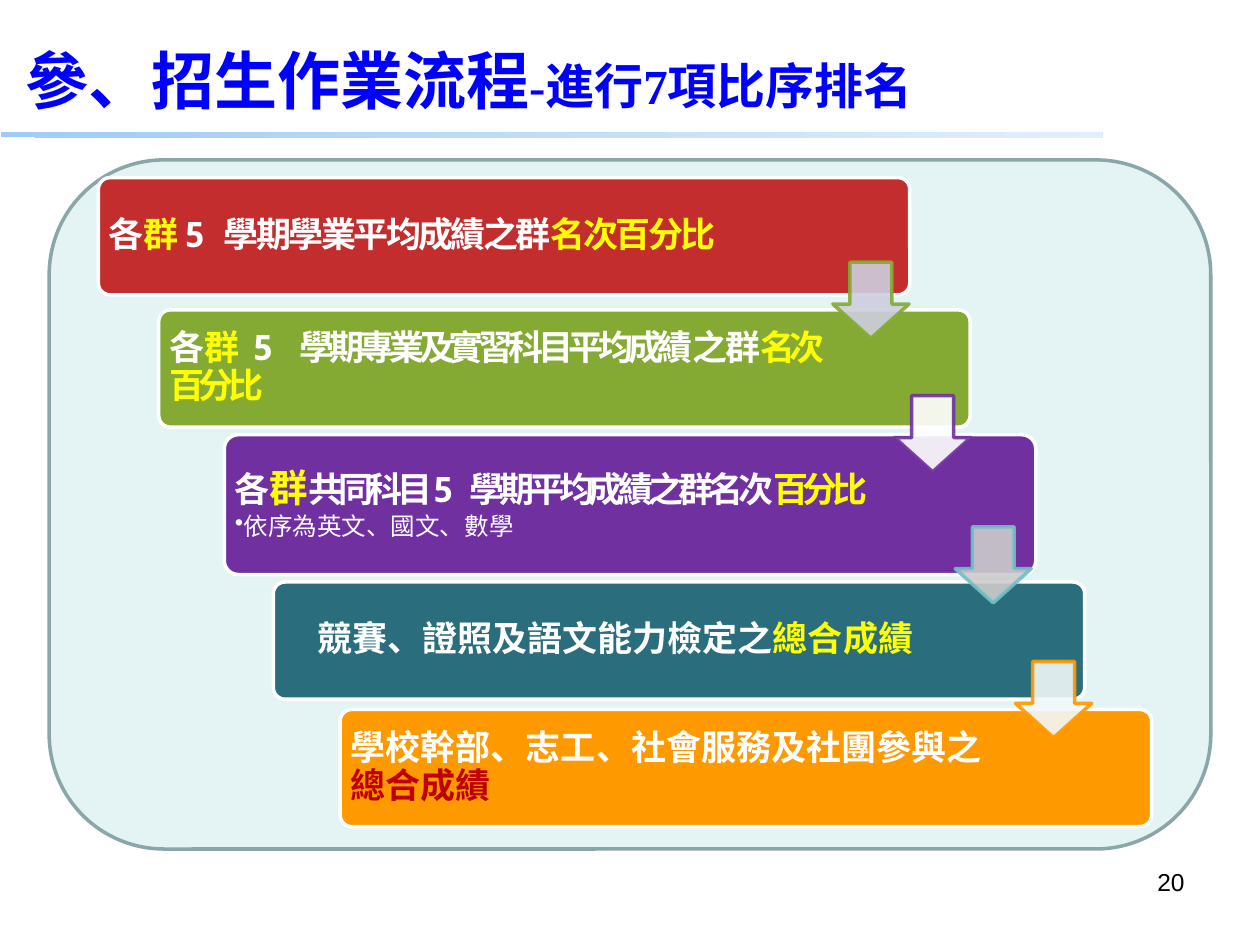
import pptx
import pptx.util
import pptx.dml.color
import pptx.enum.shapes
import pptx.enum.text
import pptx.oxml
import pptx.oxml.ns
from pptx.util import Pt

SHAPE = pptx.enum.shapes.MSO_SHAPE
ANCHOR = pptx.enum.text.MSO_ANCHOR
ALIGN = pptx.enum.text.PP_ALIGN
WHITE, YELLOW, BLUE = "FFFFFF", "FFFF00", "0000FF"
MONO = "Noto Sans Mono"


def rgb(value):
    return pptx.dml.color.RGBColor.from_string(value)


def add_run(p, text, size, color, font="Arial", bold=True, spacing=0):
    r = p.add_run()
    r.text = text
    r.font.size, r.font.bold, r.font.name = Pt(size), bold, font
    r.font.color.rgb = rgb(color)
    if spacing:
        r.font._element.set("spc", str(int(spacing * 100)))


prs = pptx.Presentation()
prs.slide_width, prs.slide_height = Pt(720), Pt(540)
s = prs.slides.add_slide(prs.slide_layouts[5])

# Rule under the title
sp = s.shapes.add_shape(SHAPE.RECTANGLE, Pt(0.7), Pt(75.6), Pt(629.3), Pt(3))
sp.shadow.inherit = False
sp.line.fill.background()
sp.fill.gradient()
sp.fill.gradient_angle = 45
for stop, color in zip(sp.fill.gradient_stops, ["9FCCF6", "E2EEFB"]):
    stop.color.rgb = rgb(color)

# Title
title = s.shapes.title
title.left, title.top, title.width, title.height = Pt(7.2), Pt(20.2), Pt(648), Pt(49.7)
tf = title.text_frame
tf.vertical_anchor = ANCHOR.TOP
tf.auto_size = pptx.enum.text.MSO_AUTO_SIZE.NONE
p = tf.paragraphs[0]
p.alignment = ALIGN.LEFT
add_run(p, "參、", 36, BLUE, "Noto Sans CJK SC")
add_run(p, "招生作業流程", 36, BLUE, "Times New Roman")
add_run(p, "-進行7項比序排名", 28, BLUE, "Times New Roman")

# Background panel
sp = s.shapes.add_shape(SHAPE.ROUNDED_RECTANGLE, Pt(28.1), Pt(91.4), Pt(663.8), Pt(393.8))
sp.shadow.inherit = False
sp.fill.solid()
sp.fill.fore_color.rgb = rgb("E4F3F4")
sp.line.color.rgb = rgb("8AA6A8")
sp.line.width = Pt(2)

# Page number
tf = s.shapes.add_textbox(Pt(516.2), Pt(491.8), Pt(167.8), Pt(37.4)).text_frame
tf.word_wrap = True
tf.paragraphs[0].alignment = ALIGN.RIGHT
add_run(tf.paragraphs[0], "20", 14, "000000", bold=False)

# Steps: left, top, height, fill, indent, runs (text, size, colour, font, bold, spacing)
steps = [
    (56.2, 101.5, 67, "C32D2E", 0, [
        ("各", 20, WHITE, "Arial", True, -1.5),
        ("群 ", 20, YELLOW, "Arial", True, -1.5),
        ("5 ", 20, WHITE, MONO, True, -1.5),
        ("學期學業平均成績之群", 20, WHITE, "Arial", True, -1.5),
        ("名次百分比", 20, YELLOW, "Arial", True, -1.5)]),
    (90.7, 177.1, 67, "84AA33", 0, [
        ("各", 20, WHITE, MONO, True, -3),
        ("群 ", 20, YELLOW, MONO, True, 1.5),
        ("5 ", 20, WHITE, MONO, True, 1.5),
        ("學期專業及實習科目平均成績", 20, WHITE, "Arial", True, -3),
        ("之群", 20, WHITE, "Arial", True, -1.5),
        ("名次百分比", 20, YELLOW, "Arial", True, -3)]),
    (128.2, 248.4, 79.9, "7030A0", 0, [
        ("各", 20, WHITE, MONO, True, -3),
        ("群", 22, YELLOW, MONO, True, -3),
        ("共同科目5 學期平均成績之群名次", 20, WHITE, MONO, True, -3),
        ("百分比", 20, YELLOW, MONO, True, -3)]),
    (156.2, 332.6, 67, "2A6D7D", 19, [
        ("競賽、證照及語文能力檢定之", 20, WHITE),
        ("總合成績", 20, YELLOW)]),
    (194.4, 405.4, 67, "FF9900", 0, [
        ("學校幹部、志工、社會服務及社團參與之", 20, WHITE),
        ("總合成績", 20, "C00000")]),
]
frames = []
for left, top, height, fill, indent, runs in steps:
    sp = s.shapes.add_shape(SHAPE.ROUNDED_RECTANGLE, Pt(left), Pt(top), Pt(463.7), Pt(height))
    sp.adjustments[0] = 0.1
    sp.shadow.inherit = False
    sp.fill.solid()
    sp.fill.fore_color.rgb = rgb(fill)
    sp.line.color.rgb = rgb(WHITE)
    sp.line.width = Pt(2)

    tf = s.shapes.add_textbox(Pt(left), Pt(top), Pt(385.5), Pt(height)).text_frame
    tf.word_wrap = True
    tf.vertical_anchor = ANCHOR.MIDDLE
    tf.margin_left = tf.margin_right = tf.margin_top = tf.margin_bottom = Pt(6)
    p = tf.paragraphs[0]
    p.line_spacing = 0.9
    if indent:
        p._p.get_or_add_pPr().set("marL", str(Pt(indent)))
    for run in runs:
        add_run(p, *run)
    frames.append(tf)

# Bullet under the third step
p = frames[2].add_paragraph()
p.level = 1
pPr = p._p.get_or_add_pPr()
pPr.set("marL", str(Pt(5)))
pPr.set("indent", str(-Pt(5)))
bullet = pptx.oxml.parse_xml(f'<a:buChar {pptx.oxml.ns.nsdecls("a")} char="•"/>')
pPr.append(bullet)
p.line_spacing = Pt(10)
p.space_before = Pt(7)
add_run(p, "依序為英文、國文、數學", 14, WHITE, bold=False)

# Arrows between steps
arrows = [(475.9, 149.8, "CECEDE", "84AA33"), (511.2, 226.1, "FFFFFF", "7030A0"),
          (545.8, 301, "CCCCCC", "72BFC5"), (580.3, 378, "F1F8F9", "FF9900")]
for left, top, fill, line in arrows:
    sp = s.shapes.add_shape(SHAPE.DOWN_ARROW, Pt(left), Pt(top), Pt(43.5), Pt(43.5))
    sp.adjustments[0], sp.adjustments[1] = 0.55, 0.45
    sp.shadow.inherit = False
    sp.fill.solid()
    sp.fill.fore_color.rgb = rgb(fill)
    sp.line.color.rgb = rgb(line)
    sp.line.width = Pt(2)
    for clr in sp._element.spPr.iter(pptx.oxml.ns.qn("a:srgbClr")):
        clr.append(pptx.oxml.parse_xml(f'<a:alpha {pptx.oxml.ns.nsdecls("a")} val="90000"/>'))

prs.save("out.pptx")
